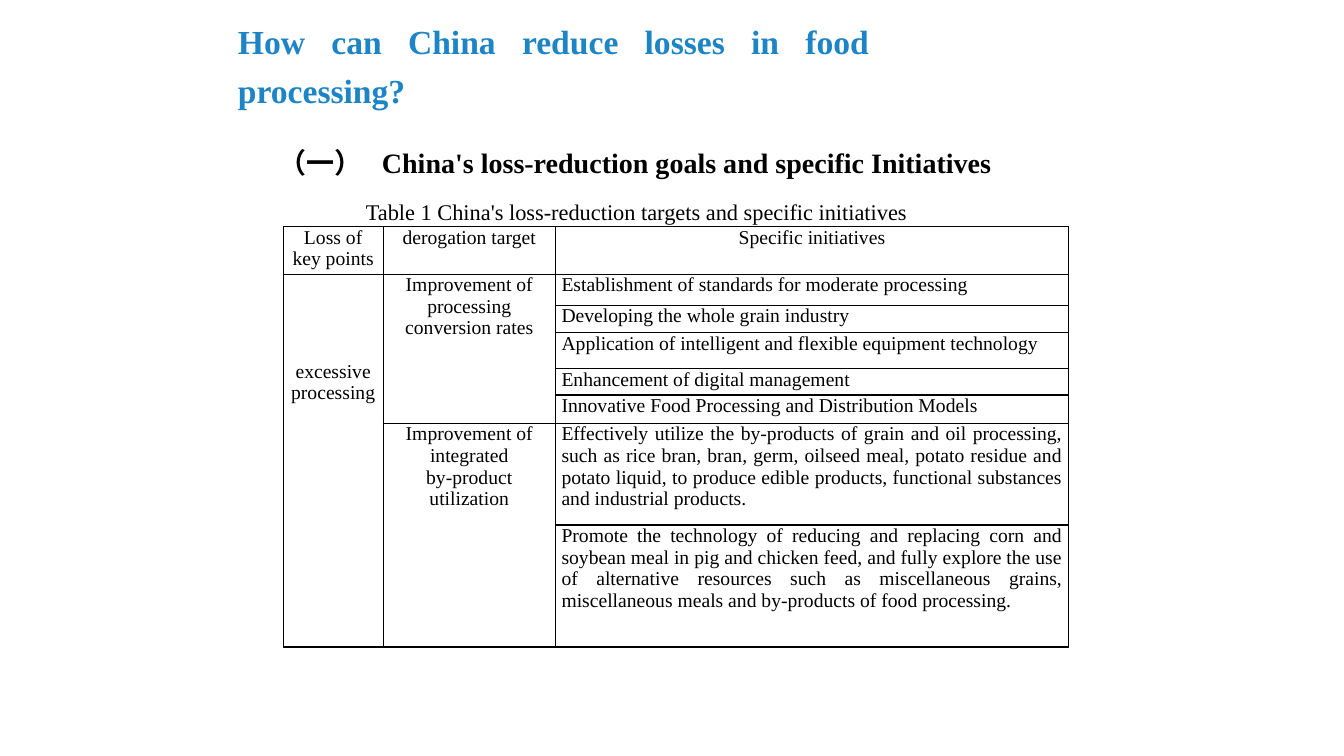
"""Build a slide on reducing losses in food processing."""
from lxml import etree
from pptx import Presentation
from pptx import util as u
from pptx.dml.color import RGBColor
from pptx.enum import text
from pptx.oxml import ns

BLUE = RGBColor(0x1D, 0x85, 0xC6)
BLACK = RGBColor(0, 0, 0)
FONT = "Times New Roman"
JUSTIFY = text.PP_ALIGN.JUSTIFY
CENTER = text.PP_ALIGN.CENTER

COLUMN_WIDTHS = [0.99, 1.71, 5.09]
ROW_HEIGHTS = [0.47, 0.31, 0.27, 0.36, 0.26, 0.28, 1.01, 1.21]
HEADERS = ["Loss of key points", "derogation target", "Specific initiatives"]
INITIATIVES = [
    "Establishment of standards for moderate processing",
    "Developing the whole grain industry",
    "Application of intelligent and flexible equipment technology",
    "Enhancement of digital management",
    "Innovative Food Processing and Distribution Models",
    "Effectively utilize the by-products of grain and oil processing, "
    "such as rice bran, bran, germ, oilseed meal, potato residue and "
    "potato liquid, to produce edible products, functional substances "
    "and industrial products.",
    "Promote the technology of reducing and replacing corn and soybean "
    "meal in pig and chicken feed, and fully explore the use of "
    "alternative resources such as miscellaneous grains, miscellaneous "
    "meals and by-products of food processing.",
]
MERGED = [
    (1, 7, 0, "excessive processing"),
    (1, 5, 1, "Improvement of\nprocessing\nconversion rates"),
    (6, 7, 1, "Improvement of\nintegrated\nby-product\nutilization"),
]


def place(shape, left, top, width, height):
    """Move and size a shape, in inches."""
    shape.left, shape.top = u.Inches(left), u.Inches(top)
    shape.width, shape.height = u.Inches(width), u.Inches(height)


def write(frame, words, size, align, color=BLACK, bold=False, spacing=None):
    """Fill a text frame and format every run."""
    frame.text = words
    for para in frame.paragraphs:
        para.alignment = align
        if spacing:
            para.line_spacing = spacing
        for span in para.runs:
            span.font.name = FONT
            span.font.size = u.Pt(size)
            span.font.bold = bold
            span.font.color.rgb = color


def add_title(page):
    """Format the title placeholder."""
    title = page.shapes.title
    place(title, 2.26, 0.08, 6.46, 1.03)
    frame = title.text_frame
    frame.word_wrap = True
    frame.vertical_anchor = text.MSO_ANCHOR.TOP
    frame.auto_size = text.MSO_AUTO_SIZE.SHAPE_TO_FIT_TEXT
    write(frame, "How can China reduce losses in food processing?",
          24, JUSTIFY, BLUE, True, 1.2)


def add_label(page, bounds, words, size, align, **style):
    """Add a wrapping text box."""
    box = page.shapes.add_textbox(*map(u.Inches, bounds))
    box.text_frame.word_wrap = True
    write(box.text_frame, words, size, align, **style)
    return box


def add_tab(para, position):
    """Set a left tab stop on a paragraph."""
    stops = etree.SubElement(para._p.get_or_add_pPr(), ns.qn("a:tabLst"))
    etree.SubElement(stops, ns.qn("a:tab"),
                     pos=str(u.Inches(position)), algn="l")


def style_cell(cell):
    """Give a cell black borders, no fill and narrow margins."""
    properties = cell._tc.get_or_add_tcPr()
    for side in ("lnL", "lnR", "lnT", "lnB"):
        line = etree.SubElement(properties, ns.qn(f"a:{side}"),
                                w=str(u.Pt(1)))
        fill = etree.SubElement(line, ns.qn("a:solidFill"))
        etree.SubElement(fill, ns.qn("a:srgbClr"), val=str(BLACK))
    cell.fill.background()
    cell.margin_left = cell.margin_right = u.Inches(0.06)
    cell.margin_top = cell.margin_bottom = 0


def add_initiatives(page):
    """Add the table of targets and initiatives."""
    bounds = (2.81, 2.25, sum(COLUMN_WIDTHS), sum(ROW_HEIGHTS))
    table = page.shapes.add_table(len(ROW_HEIGHTS), len(COLUMN_WIDTHS),
                                  *map(u.Inches, bounds)).table
    table.first_row = table.horz_banding = False
    for column, width in zip(table.columns, COLUMN_WIDTHS):
        column.width = u.Inches(width)
    for row, height in zip(table.rows, ROW_HEIGHTS):
        row.height = u.Inches(height)
    for cell in table.iter_cells():
        style_cell(cell)
        write(cell.text_frame, "", 14, CENTER)
        cell.text_frame.paragraphs[0].font.size = u.Pt(14)
    for column, words in enumerate(HEADERS):
        write(table.cell(0, column).text_frame, words, 14, CENTER)
    for row, words in enumerate(INITIATIVES, 1):
        write(table.cell(row, 2).text_frame, words, 14, JUSTIFY)
    for first, last, column, words in MERGED:
        cell = table.cell(first, column)
        cell.merge(table.cell(last, column))
        write(cell.text_frame, words, 14, CENTER)
    table.cell(1, 0).margin_top = u.Inches(0.86)


def main():
    """Build and save the deck."""
    deck = Presentation()
    deck.slide_width, deck.slide_height = u.Inches(13.33), u.Inches(7.5)
    page = deck.slides.add_slide(deck.slide_layouts.get_by_name("Title Only"))
    add_title(page)
    heading = add_label(
        page, (2.66, 1.23, 7.93, 4.88),
        "（一）\tChina's loss-reduction goals and specific Initiatives",
        20, JUSTIFY, bold=True, spacing=1.5)
    add_tab(heading.text_frame.paragraphs[0], 1.03)
    add_initiatives(page)
    add_label(page, (3.53, 1.92, 6.34, 0.4),
              "Table 1 China's loss-reduction targets and specific initiatives",
              16, text.PP_ALIGN.LEFT)
    deck.save("out.pptx")


if __name__ == "__main__":
    main()
